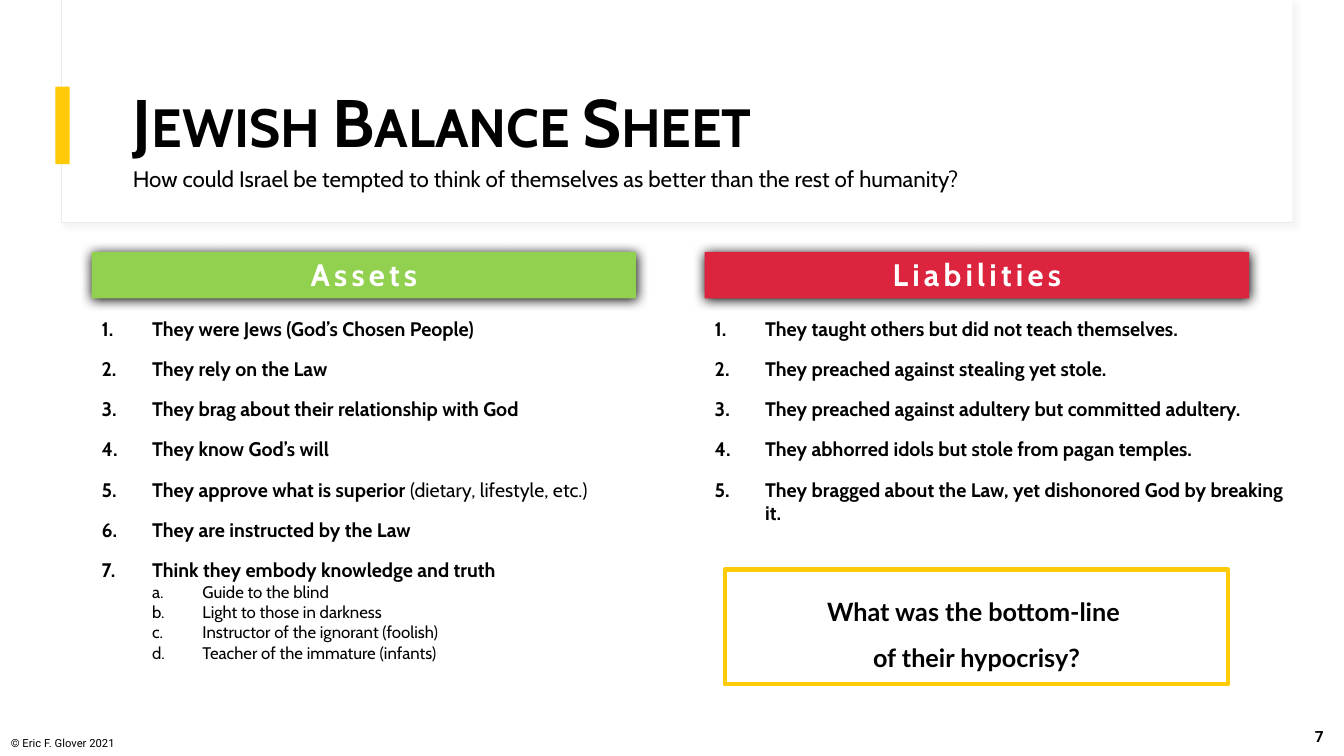
import pptx
from lxml import etree
from pptx.dml.color import RGBColor
from pptx.enum.shapes import MSO_SHAPE
from pptx.enum.text import MSO_ANCHOR, PP_ALIGN
from pptx.oxml.ns import qn
from pptx.util import Inches, Pt

BLACK = RGBColor(0x00, 0x00, 0x00)
WHITE = RGBColor(0xFF, 0xFF, 0xFF)
YELLOW = RGBColor(0xFF, 0xCA, 0x08)
GREEN = RGBColor(0x92, 0xD0, 0x50)
RED = RGBColor(0xDD, 0x24, 0x3F)
FRAME_LINE = RGBColor(0xEE, 0xEA, 0xE7)
FRAME_SHADOW = RGBColor(0xD9, 0xD9, 0xD9)

TITLE = "Jewish Balance Sheet"
SUBTITLE = "How could Israel be tempted to think of themselves as better than the rest of humanity?"
QUESTION = ["What was the bottom-line ", "of their hypocrisy?"]
COPYRIGHT = "© Eric F. Glover 2021"
PAGE_NUMBER = "7"

# Each item: bold text, plain remark, sub-items
ASSETS = [
    ("They were Jews (God’s Chosen People)", "", []),
    ("They rely on the Law", "", []),
    ("They brag about their relationship with God", "", []),
    ("They know God’s will", "", []),
    ("They approve what is superior", " (dietary, lifestyle, etc.)", []),
    ("They are instructed by the Law", "", []),
    ("Think they embody knowledge and truth", "", [
        "Guide to the blind",
        "Light to those in darkness",
        "Instructor of the ignorant (foolish)",
        "Teacher of the immature (infants)",
    ]),
]
LIABILITIES = [
    ("They taught others but did not teach themselves.", "", []),
    ("They preached against stealing yet stole.", "", []),
    ("They preached against adultery but committed adultery.", "", []),
    ("They abhorred idols but stole from pagan temples.", "", []),
    ("They bragged about the Law, yet dishonored God by breaking it.", "", []),
]
# Heading, colour, left edge, list width, list height, items
COLUMNS = [
    ("Assets", GREEN, 0.91, 5.4, 3.63, ASSETS),
    ("Liabilities", RED, 6.99, 5.88, 2.37, LIABILITIES),
]


def add_shadow(shape, color, opacity, blur, distance, angle):
    """Outer shadow; opacity in percent, blur and distance in points."""
    effects = shape._element.spPr.find(qn("a:effectLst"))
    shadow = etree.SubElement(
        effects, qn("a:outerShdw"), blurRad=str(Pt(blur)), dist=str(Pt(distance)),
        dir=str(angle * 60000), algn="ctr", rotWithShape="0")
    shade = etree.SubElement(shadow, qn("a:srgbClr"), val=str(color))
    etree.SubElement(shade, qn("a:alpha"), val=str(opacity * 1000))


def add_box(slide, place, fill, line=None, line_width=1):
    shape = slide.shapes.add_shape(MSO_SHAPE.RECTANGLE, *map(Inches, place))
    shape.shadow.inherit = False
    shape.fill.solid()
    shape.fill.fore_color.rgb = fill
    if line is None:
        shape.line.fill.background()
    else:
        shape.line.color.rgb = line
        shape.line.width = Pt(line_width)
    return shape


def add_text_box(slide, place, anchor=MSO_ANCHOR.TOP):
    text_box = slide.shapes.add_textbox(*map(Inches, place))
    text_box.text_frame.word_wrap = True
    text_box.text_frame.vertical_anchor = anchor
    return text_box.text_frame


def add_run(paragraph, text, size, font="Cabin", bold=False, color=BLACK):
    run = paragraph.add_run()
    run.text = text
    run.font.size = Pt(size)
    run.font.name = font
    run.font.bold = bold
    run.font.color.rgb = color
    return run


def number_paragraph(paragraph, level, scheme):
    properties = paragraph._p.get_or_add_pPr()
    properties.set("marL", str(Inches(0.5 * (level + 1))))
    properties.set("indent", str(Inches(-0.5)))
    if level:
        properties.set("lvl", str(level))
    etree.SubElement(properties, qn("a:buFont"), typeface="+mj-lt")
    etree.SubElement(properties, qn("a:buAutoNum"), type=scheme)


def fill_list(frame, items):
    paragraph = frame.paragraphs[0]
    for index, (text, remark, subitems) in enumerate(items):
        if index:
            paragraph = frame.add_paragraph()
        paragraph.space_after = Pt(0 if subitems else 12)
        number_paragraph(paragraph, 0, "arabicPeriod")
        add_run(paragraph, text, 14, bold=True)
        if remark:
            add_run(paragraph, remark, 14)
        for subitem in subitems:
            paragraph = frame.add_paragraph()
            number_paragraph(paragraph, 1, "alphaLcPeriod")
            add_run(paragraph, subitem, 12)


def add_column(slide, heading, color, left, width, height, items):
    banner = add_box(slide, (left, 2.5, 5.4, 0.46), color)
    add_shadow(banner, BLACK, 100, 8.5, 1, 90)
    banner.text_frame.vertical_anchor = MSO_ANCHOR.BOTTOM
    paragraph = banner.text_frame.paragraphs[0]
    paragraph.alignment = PP_ALIGN.CENTER
    paragraph.line_spacing = 0.9
    paragraph.space_before = Pt(10)
    run = add_run(paragraph, heading, 22.2, bold=True, color=WHITE)
    run.font._element.set("spc", "300")
    fill_list(add_text_box(slide, (left, 3.09, width, height)), items)


def add_header(slide):
    frame = add_box(slide, (0.61, 0, 12.21, 2.21), WHITE, FRAME_LINE, 0.75)
    add_shadow(frame, FRAME_SHADOW, 30, 4, 3, 45)
    add_box(slide, (0.62, 0, 12.2, 2.2), WHITE)
    add_box(slide, (0.55, 0.86, 0.14, 0.77), YELLOW)
    title = add_text_box(slide, (1.22, 0.6, 11.12, 1.29), MSO_ANCHOR.MIDDLE).paragraphs[0]
    title.line_spacing = 0.9
    run = add_run(title, TITLE, 48, bold=True)
    run.font._element.set("cap", "small")
    subtitle = add_text_box(slide, (1.22, 1.59, 11.6, 0.37)).paragraphs[0]
    add_run(subtitle, SUBTITLE, 16)


def add_question(slide):
    box = add_box(slide, (7.19, 5.65, 4.99, 1.14), WHITE, YELLOW, 3)
    box.text_frame.vertical_anchor = MSO_ANCHOR.MIDDLE
    paragraph = box.text_frame.paragraphs[0]
    paragraph.alignment = PP_ALIGN.CENTER
    paragraph.line_spacing = 1.5
    for index, line in enumerate(QUESTION):
        if index:
            paragraph.add_line_break()
        add_run(paragraph, line, 18, "Lato", bold=True)


def add_footer(slide):
    number = add_text_box(slide, (12.84, 7.11, 0.49, 0.4), MSO_ANCHOR.MIDDLE).paragraphs[0]
    number.alignment = PP_ALIGN.CENTER
    number.space_after = Pt(6)
    add_run(number, PAGE_NUMBER, 11, "Roboto", bold=True)
    notice = add_text_box(slide, (0.01, 7.21, 1.57, 0.28), MSO_ANCHOR.BOTTOM).paragraphs[0]
    add_run(notice, COPYRIGHT, 8, "Roboto")


def main():
    presentation = pptx.Presentation()
    presentation.slide_width = Inches(13.33)
    presentation.slide_height = Inches(7.5)
    slide = presentation.slides.add_slide(presentation.slide_layouts[6])
    add_footer(slide)
    add_header(slide)
    for column in COLUMNS:
        add_column(slide, *column)
    add_question(slide)
    presentation.save("out.pptx")


if __name__ == "__main__":
    main()
